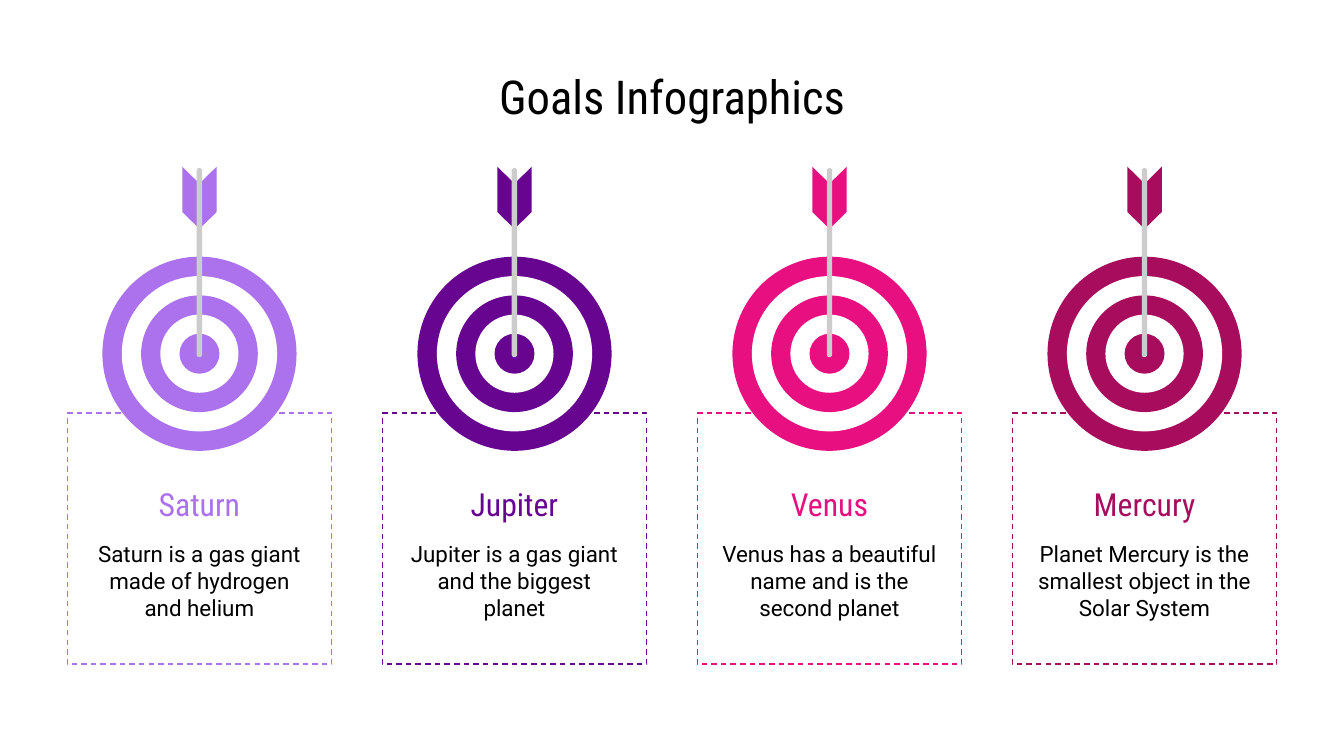
import pptx
import pptx.util
import pptx.dml.color
import pptx.enum.dml
import pptx.enum.shapes
import pptx.enum.text

Pt = pptx.util.Pt
KIND = pptx.enum.shapes.MSO_SHAPE

TITLE = "Goals Infographics"
GOALS = [
    ("Saturn", "Saturn is a gas giant made of hydrogen and helium", "lilac"),
    ("Jupiter", "Jupiter is a gas giant and the biggest planet", "purple"),
    ("Venus", "Venus has a beautiful name and is the second planet", "pink"),
    ("Mercury", "Planet Mercury is the smallest object in the Solar System", "wine"),
]
COLORS = {
    "lilac": "AC71EC", "purple": "670591", "pink": "E81080", "wine": "A80C5D",
    "black": "000000", "white": "FFFFFF", "gray": "CCCCCC",
}
HEAD, BODY = "Roboto Condensed", "Roboto"
WIDTH, HEIGHT, MARGIN = 720, 405, 36
CARD_W, CARD_H, CARD_TOP = 141.7, 134.6, 221.2
STEP = (WIDTH - 2 * MARGIN - CARD_W) / (len(GOALS) - 1)
TEXT_W = 131.4
RINGS = [104, 83.2, 62.5, 41.9, 21.4]
MIDDLE = 189.5
FEATHER = [(9.2, 89.3), (9.2, 113.6), (0, 122.6), (0, 98.4)]
SHAFT_W, SHAFT_TOP, SHAFT_H = 2.9, 90, 101.4


def rgb(name):
    return pptx.dml.color.RGBColor.from_string(COLORS[name])


def paint(shape, color):
    shape.shadow.inherit = False
    shape.fill.solid()
    shape.fill.fore_color.rgb = rgb(color)
    shape.line.fill.background()


def add_shape(kind, mid, top, width, height, color):
    shape = slide.shapes.add_shape(
        kind, Pt(mid - width / 2), Pt(top), Pt(width), Pt(height))
    paint(shape, color)
    return shape


def write(shape, text, size, font, color):
    frame = shape.text_frame
    frame.word_wrap = True
    frame.auto_size = pptx.enum.text.MSO_AUTO_SIZE.NONE
    frame.vertical_anchor = pptx.enum.text.MSO_ANCHOR.MIDDLE
    frame.margin_left = frame.margin_right = Pt(7.2)
    frame.margin_top = frame.margin_bottom = Pt(7.2)
    para = frame.paragraphs[0]
    para.text = text
    para.alignment = pptx.enum.text.PP_ALIGN.CENTER
    para.font.size = Pt(size)
    para.font.name = font
    para.font.color.rgb = rgb(color)


def add_text(mid, top, height, text, size, font, color):
    box = slide.shapes.add_textbox(
        Pt(mid - TEXT_W / 2), Pt(top), Pt(TEXT_W), Pt(height))
    write(box, text, size, font, color)


def add_card(mid, name, text, color):
    card = add_shape(KIND.ROUNDED_RECTANGLE, mid, CARD_TOP, CARD_W, CARD_H, "white")
    card.adjustments[0] = 0
    card.line.color.rgb = rgb(color)
    card.line.width = Pt(0.75)
    card.line.dash_style = pptx.enum.dml.MSO_LINE.DASH
    add_text(mid, 255.2, 29.5, name, 17, HEAD, color)
    add_text(mid, 282.2, 57.6, text, 12, BODY, "black")


def add_target(mid, color):
    for i, size in enumerate(RINGS):
        add_shape(KIND.OVAL, mid, MIDDLE - size / 2, size, size,
                  "white" if i % 2 else color)
    for side in (-1, 1):
        dots = [(Pt(mid + side * x), Pt(y)) for x, y in FEATHER]
        pen = slide.shapes.build_freeform(*dots[0])
        pen.add_line_segments(dots[1:], close=True)
        paint(pen.convert_to_shape(), color)
    shaft = add_shape(KIND.ROUNDED_RECTANGLE, mid, SHAFT_TOP, SHAFT_W, SHAFT_H, "gray")
    shaft.adjustments[0] = 0.5


deck = pptx.Presentation()
deck.slide_width, deck.slide_height = Pt(WIDTH), Pt(HEIGHT)
slide = deck.slides.add_slide(deck.slide_layouts[5])

title = slide.shapes.title
title.left, title.top = Pt(MARGIN), Pt(32.4)
title.width, title.height = Pt(WIDTH - 2 * MARGIN), Pt(38.2)
write(title, TITLE, 25, HEAD, "black")

for i, (name, text, color) in enumerate(GOALS):
    mid = MARGIN + CARD_W / 2 + i * STEP
    add_card(mid, name, text, color)
    add_target(mid, color)

deck.save("out.pptx")
